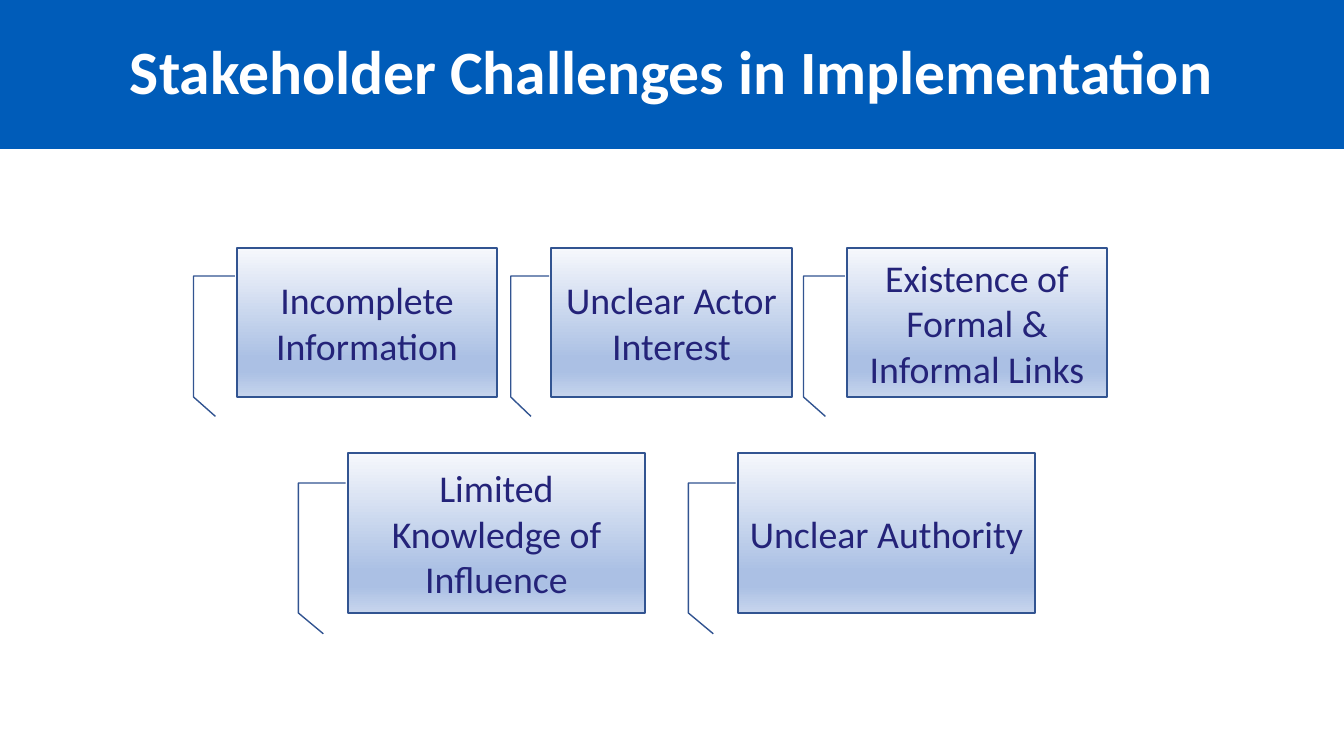
import copy
from dataclasses import dataclass

import pptx
import pptx.dml.color
import pptx.enum.shapes
import pptx.enum.text
import pptx.oxml.ns
import pptx.slide
import pptx.util

RGBColor = pptx.dml.color.RGBColor
WHITE = RGBColor(0xFF, 0xFF, 0xFF)
BANNER_BLUE = RGBColor(0x00, 0x5C, 0xB9)
BORDER_BLUE = RGBColor(0x32, 0x54, 0x91)
TEXT_NAVY = RGBColor(0x24, 0x23, 0x79)
GRADIENT = (
    (0, RGBColor(0xF6, 0xF8, 0xFC)),
    (0.74, RGBColor(0xAB, 0xC0, 0xE4)),
    (0.83, RGBColor(0xAB, 0xC0, 0xE4)),
    (1, RGBColor(0xC7, 0xD5, 0xED)),
)
CALLOUT_LINE = (0.188, -0.008, 0.188, -0.167, 1, -0.167, 1.13, -0.083)
FONT = "Calibri"
PAGE_WIDTH = 1344
PAGE_HEIGHT = 756
EMU_PER_PX = 12192000 / PAGE_WIDTH


@dataclass(frozen=True)
class Challenge:
    text: str
    left: int
    width: int


@dataclass(frozen=True)
class Row:
    top: int
    height: int
    challenges: tuple[Challenge, ...]


ROWS = (
    Row(248, 149, (
        Challenge("Incomplete Information", 237, 260),
        Challenge("Unclear Actor Interest", 551, 241),
        Challenge("Existence of Formal & Informal Links", 847, 260),
    )),
    Row(453, 160, (
        Challenge("Limited Knowledge of Influence", 348, 297),
        Challenge("Unclear Authority", 738, 297),
    )),
)


def px(length: int) -> pptx.util.Emu:
    return pptx.util.Emu(round(length * EMU_PER_PX))


def write_text(shape, text: str, size: int, color: RGBColor, bold: bool) -> None:
    frame = shape.text_frame
    frame.text = text
    frame.word_wrap = True
    frame.auto_size = pptx.enum.text.MSO_AUTO_SIZE.NONE
    frame.vertical_anchor = pptx.enum.text.MSO_ANCHOR.MIDDLE
    para = frame.paragraphs[0]
    para.alignment = pptx.enum.text.PP_ALIGN.CENTER
    para.font.name = FONT
    para.font.size = pptx.util.Pt(size)
    para.font.bold = bold
    para.font.color.rgb = color


def fill_gradient(shape) -> None:
    shape.fill.gradient()
    shape.fill.gradient_angle = 270
    stop_list = shape.element.spPr.find(".//" + pptx.oxml.ns.qn("a:gsLst"))
    while len(stop_list) < len(GRADIENT):
        stop_list.append(copy.deepcopy(stop_list[0]))
    for stop, (position, color) in zip(shape.fill.gradient_stops, GRADIENT):
        stop.position = position
        stop.color.rgb = color


def draw_title(page: pptx.slide.Slide, text: str) -> None:
    title = page.shapes.title
    title.left, title.top = px(0), px(0)
    title.width, title.height = px(PAGE_WIDTH), px(149)
    title.fill.solid()
    title.fill.fore_color.rgb = BANNER_BLUE
    write_text(title, text, 44, WHITE, True)
    title.text_frame.paragraphs[0].line_spacing = 0.9


def draw_challenge(page: pptx.slide.Slide, row: Row, challenge: Challenge) -> None:
    box = page.shapes.add_shape(
        pptx.enum.shapes.MSO_SHAPE.LINE_CALLOUT_3,
        px(challenge.left), px(row.top), px(challenge.width), px(row.height),
    )
    for index, value in enumerate(CALLOUT_LINE):
        box.adjustments[index] = value
    box.shadow.inherit = False
    fill_gradient(box)
    box.line.color.rgb = BORDER_BLUE
    box.line.width = pptx.util.Pt(1)
    write_text(box, challenge.text, 27, TEXT_NAVY, False)
    frame = box.text_frame
    frame.margin_left = frame.margin_right = px(7)
    frame.margin_top = frame.margin_bottom = px(4)


def main() -> None:
    deck = pptx.Presentation()
    deck.slide_width = px(PAGE_WIDTH)
    deck.slide_height = px(PAGE_HEIGHT)
    page = deck.slides.add_slide(deck.slide_layouts.get_by_name("Title Only"))
    draw_title(page, "Stakeholder Challenges in Implementation")
    for row in ROWS:
        for challenge in row.challenges:
            draw_challenge(page, row, challenge)
    deck.save("out.pptx")


if __name__ == "__main__":
    main()
